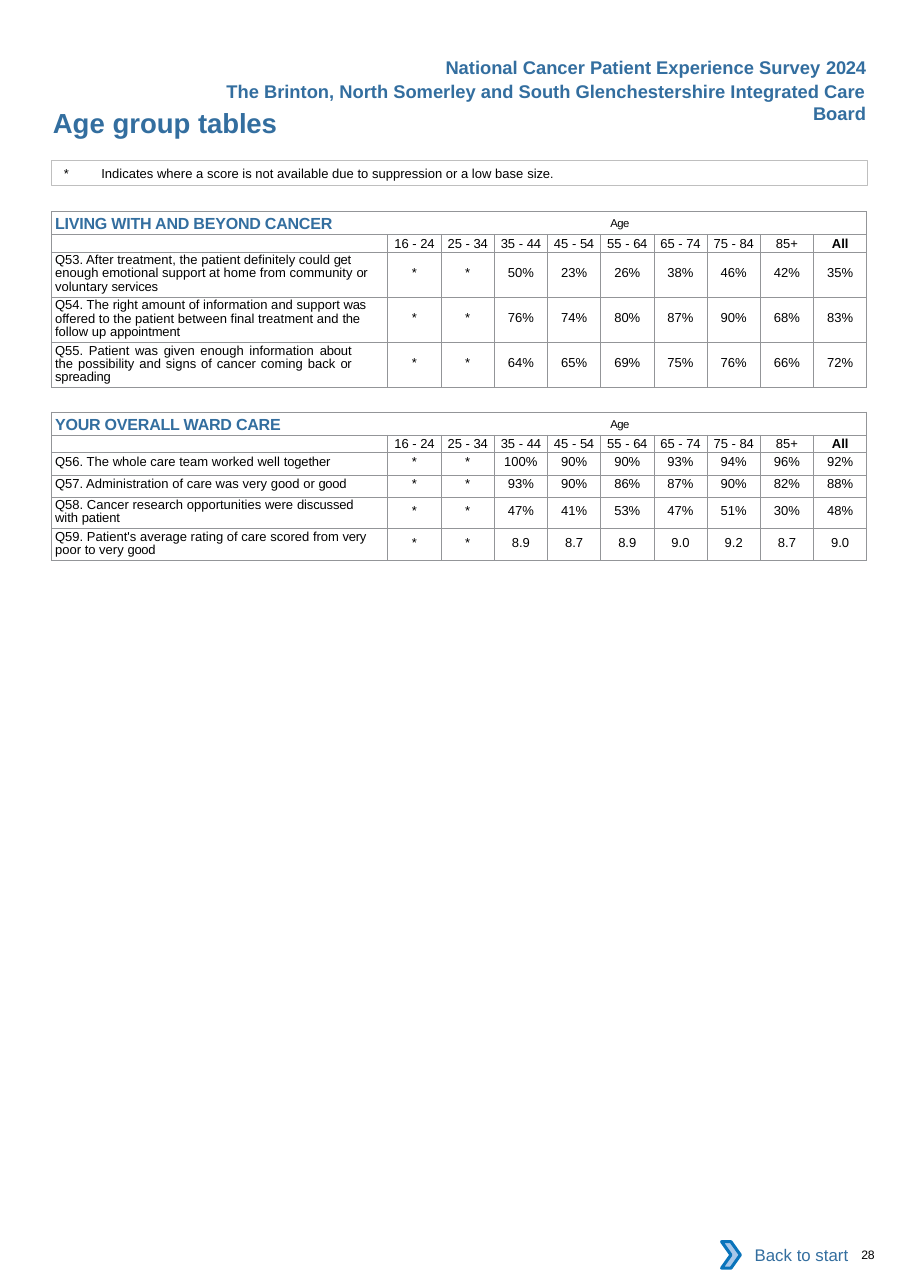
from lxml.etree import SubElement
from pptx import Presentation
from pptx.dml.color import RGBColor
from pptx.enum.shapes import MSO_SHAPE as Kind
from pptx.enum.text import MSO_ANCHOR as Anchor, MSO_AUTO_SIZE as Fit, PP_ALIGN as Align
from pptx.oxml import parse_xml
from pptx.oxml.ns import nsdecls, qn
from pptx.util import Emu, Pt

SCALE = 9144
BLUE, BLACK, WHITE, GREY = "336E9F", "000000", "FFFFFF", "939598"
LEFT, WIDTH, FIRST = 47, 740, 305
AGES = ["16 - 24", "25 - 34", "35 - 44", "45 - 54", "55 - 64",
        "65 - 74", "75 - 84", "85+", "All"]
ROWS = {1: (20, 2, 2), 2: (29, 2, 6), 3: (41, 2, 12)}

LIVING = [
    (3, [("Q53. After treatment, the patient definitely could", 0), (" get ", -0.2),
         ("enough emotional support at home from community ", 0), ("or ", -0.2),
         ("voluntary ", 0), ("services", -0.1)],
     "* * 50% 23% 26% 38% 46% 42% 35%"),
    (3, [("Q54. The right amount of information and support", 0), (" was ", -0.2),
         ("offered to the patient between final treatment and ", 0), ("the ", -0.2),
         ("follow up ", 0), ("appointment", -0.1)],
     "* * 76% 74% 80% 87% 90% 68% 83%"),
    (3, [("Q55. Patient was given enough information ", 0), ("about ", -0.1),
         ("the possibility and signs of cancer coming back ", 0), ("or ", -0.2),
         ("spreading", -0.1)],
     "* * 64% 65% 69% 75% 76% 66% 72%"),
]
OVERALL = [
    (1, [("Q56. The whole care team worked well ", 0), ("together", -0.1)],
     "* * 100% 90% 90% 93% 94% 96% 92%"),
    (1, [("Q57. Administration of care was very good or", 0), (" good", -0.2)],
     "* * 93% 90% 86% 87% 90% 82% 88%"),
    (2, [("Q58. Cancer research opportunities were ", 0), ("discussed ", -0.1),
         ("with ", 0), ("patient", -0.1)],
     "* * 47% 41% 53% 47% 51% 30% 48%"),
    (2, [("Q59. Patient's average rating of care scored from", 0), (" very ", -0.2),
         ("poor to very ", 0), ("good", -0.2)],
     "* * 8.9 8.7 8.9 9.0 9.2 8.7 9.0"),
]


def px(num):
    return Emu(round(num * SCALE))


def color(code):
    return RGBColor.from_string(code)


def add_run(para, text, size, code=BLACK, bold=False, gap=0):
    run = para.add_run()
    run.text = text
    font = run.font
    font.name, font.size, font.bold = "Arial", Pt(size), bold
    font.color.rgb = color(code)
    if gap:
        font._element.set("spc", str(round(gap * 100)))
    return run


def add_tab(para, pos):
    tabs = SubElement(para._p.get_or_add_pPr(), qn("a:tabLst"))
    SubElement(tabs, qn("a:tab"), pos=str(px(pos)), algn="l")


def set_pad(item, left=0, top=0, right=0, foot=0):
    item.margin_left, item.margin_top = px(left), px(top)
    item.margin_right, item.margin_bottom = px(right), px(foot)


def set_frame(shape, pad, align, anchor=Anchor.TOP, wrap=True):
    frame = shape.text_frame
    frame.word_wrap, frame.auto_size = wrap, Fit.NONE
    frame.vertical_anchor = anchor
    set_pad(frame, *pad)
    para = frame.paragraphs[0]
    para.alignment = align
    return para


def add_text(slide, box, pad, align, wrap=True):
    shape = slide.shapes.add_textbox(*map(px, box))
    return set_frame(shape, pad, align, wrap=wrap)


def add_block(shapes, kind, box, fill=None, line=None, thick=0.5):
    shape = shapes.add_shape(kind, *map(px, box))
    shape.shadow.inherit = False
    if fill:
        shape.fill.solid()
        shape.fill.fore_color.rgb = color(fill)
    else:
        shape.fill.background()
    if line:
        shape.line.color.rgb = color(line)
        shape.line.width = Pt(thick)
    else:
        shape.line.fill.background()
    return shape


def set_cell(cell):
    set_pad(cell)
    cell.vertical_anchor = Anchor.MIDDLE
    cell.fill.background()
    props = cell._tc.get_or_add_tcPr()
    for spot, side in enumerate("LRTB"):
        props.insert(spot, parse_xml(
            f'<a:ln{side} {nsdecls("a")} w="{Pt(0.5)}"><a:solidFill>'
            f'<a:srgbClr val="{GREY}"/></a:solidFill></a:ln{side}>'))
    SubElement(cell.text_frame.paragraphs[0]._p, qn("a:endParaRPr"), sz="850")


def cell_para(cell, align=Align.CENTER, space=None):
    para = cell.text_frame.paragraphs[0]
    para.alignment = align
    if space:
        para.line_spacing = Pt(space)
    return para


def add_head(table, title):
    cell = table.cell(0, 0)
    cell.merge(table.cell(0, len(AGES)))
    cell.margin_left = px(3)
    para = cell_para(cell, Align.LEFT)
    add_tab(para, 504)
    add_run(para, title + "\t", 10.5, BLUE, True, -0.1)
    age = add_run(para, "Age", 12.8, gap=-0.4)
    age.font._element.set("baseline", "10000")
    for col, text in enumerate(AGES, 1):
        para = cell_para(table.cell(1, col), space=9.9)
        if " - " in text:
            add_run(para, text[:5], 8.5)
            add_run(para, text[5:], 8.5, gap=-0.2)
        else:
            add_run(para, text, 8.5, bold=text == "All")


def add_scores(table, row, lines, runs, scores):
    _, top, drop = ROWS[lines]
    even = runs[0][0].startswith("Q55")
    cell = table.cell(row, 0)
    cell.vertical_anchor = Anchor.TOP
    set_pad(cell, 3, top, 33 if even else 15)
    para = cell_para(cell, Align.JUSTIFY if even else Align.LEFT,
                     8.6 if lines > 1 else None)
    for text, gap in runs:
        add_run(para, text, 8.5, gap=gap)
    for col, score in enumerate(scores.split(), 1):
        cell = table.cell(row, col)
        cell.vertical_anchor = Anchor.TOP
        set_pad(cell, top=drop)
        add_run(cell_para(cell), score, 8.5)


def add_grid(slide, top, title, items):
    highs = [21, 16] + [ROWS[item[0]][0] for item in items]
    box = (LEFT, top, WIDTH, sum(highs))
    table = slide.shapes.add_table(len(highs), len(AGES) + 1, *map(px, box)).table
    table.first_row = table.horz_banding = False
    for row, high in zip(table.rows, highs):
        row.height = px(high)
    for spot, col in enumerate(table.columns):
        col.width = px((WIDTH - FIRST) / len(AGES) if spot else FIRST)
    for cell in table.iter_cells():
        set_cell(cell)
    add_head(table, title)
    for row, item in enumerate(items, 2):
        add_scores(table, row, *item)


def add_title(slide):
    title = slide.shapes.title
    title.left, title.top, title.width, title.height = map(px, (LEFT, 96, 413, 30))
    para = set_frame(title, (1, 0, 0, 0), Align.LEFT)
    add_run(para, "Age group ", 18, BLUE, True)
    add_run(para, "tables", 18, BLUE, True, -0.1)


def add_note(slide):
    note = add_block(slide.shapes, Kind.RECTANGLE, (LEFT, 146, WIDTH, 22), line="BFBFBF")
    para = set_frame(note, (11, 4, 0, 0), Align.LEFT)
    add_tab(para, 34)
    add_run(para, "*", 8.5, gap=-0.5)
    add_run(para, "\tIndicates where a score is not available due to "
                  "suppression or a low base ", 8.5)
    add_run(para, "size", 8.5, gap=-0.1)
    add_run(para, ".", 8)


def add_back(slide):
    group = slide.shapes.add_group_shape()
    label = add_block(group.shapes, Kind.RECTANGLE, (662, 1118, 118, 42), WHITE)
    para = set_frame(label, (10, 5, 10, 5), Align.RIGHT, Anchor.MIDDLE)
    add_run(para, "Back to start", 11, BLUE)
    add_block(group.shapes, Kind.CHEVRON, (655, 1127, 17, 24), "A8C7E9", "0A74BB", 2)


def main():
    deck = Presentation()
    deck.slide_width, deck.slide_height = px(826), px(1169)
    slide = deck.slides.add_slide(deck.slide_layouts[5])
    add_title(slide)
    add_run(add_text(slide, (772, 1132, 51, 13), (10, 0, 0, 0), Align.LEFT),
            "28", 8, gap=-0.2)
    add_grid(slide, 192, "LIVING WITH AND BEYOND CANCER", LIVING)
    add_grid(slide, 374, "YOUR OVERALL WARD CARE", OVERALL)
    add_note(slide)
    add_run(add_text(slide, (163, 68, 633, 50), (10, 5, 10, 5), Align.RIGHT),
            "The Brinton, North Somerley and South Glenchestershire "
            "Integrated Care Board", 12, BLUE, True)
    para = add_text(slide, (392, 46, 404, 30), (10, 5, 10, 5), Align.RIGHT, False)
    add_run(para, "National Cancer Patient Experience Survey ", 12, BLUE, True)
    add_run(para, "2024", 12, BLUE, True, -0.2)
    add_back(slide)
    deck.save("out.pptx")


if __name__ == "__main__":
    main()
